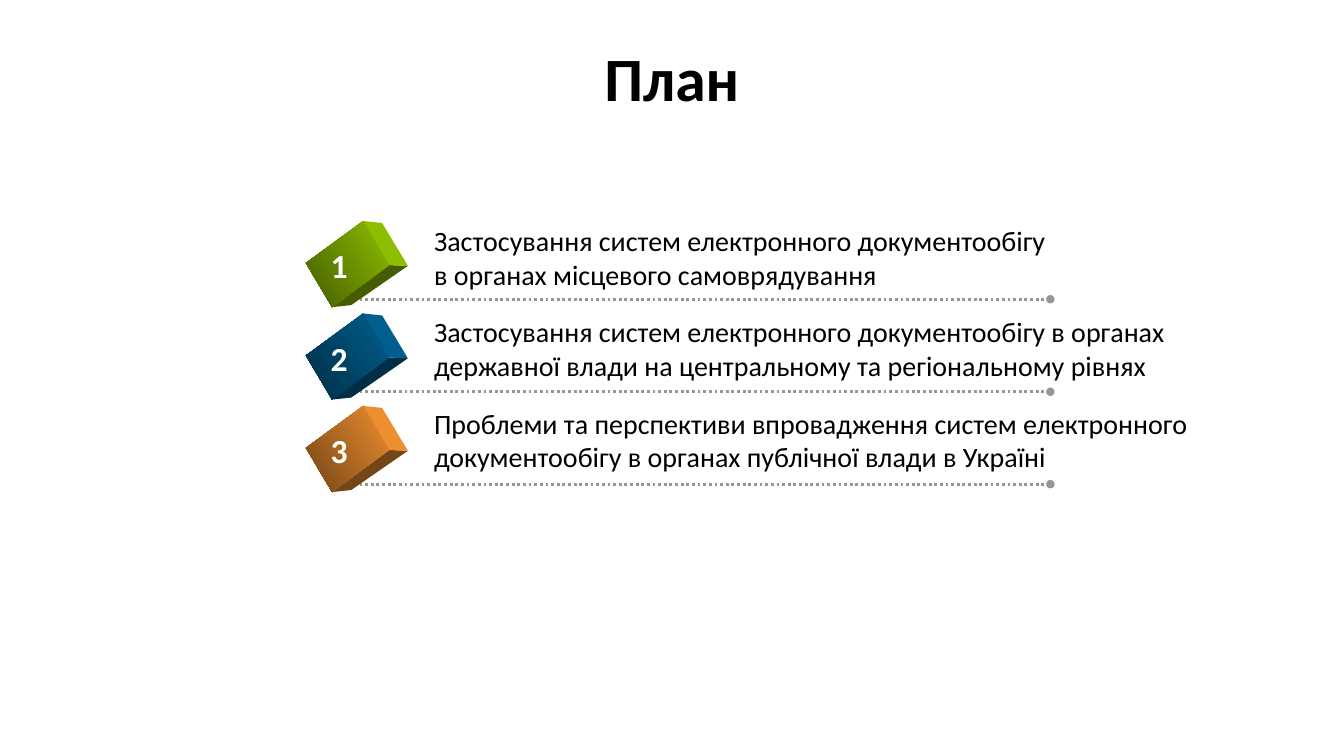
from lxml import etree
from pptx import Presentation
from pptx.dml.color import RGBColor
from pptx.enum.dml import MSO_LINE
from pptx.enum.shapes import MSO_CONNECTOR
from pptx.enum.text import MSO_ANCHOR, PP_ALIGN
from pptx.oxml.ns import qn
from pptx.util import Cm, Pt

STRAIGHT = MSO_CONNECTOR.STRAIGHT
DOTTED = MSO_LINE.ROUND_DOT
TOP, MIDDLE = MSO_ANCHOR.TOP, MSO_ANCHOR.MIDDLE
LEFT, CENTER = PP_ALIGN.LEFT, PP_ALIGN.CENTER

ROW_PITCH = 2.33
TEXT_PITCH = 2.3
FRONT = [(7.71, 6.63), (9.15, 5.57), (9.8, 6.68), (8.37, 7.74)]
SIDE = [(9.15, 5.57), (9.63, 5.62), (10.28, 6.7), (9.8, 6.68)]
BOTTOM = [(8.37, 7.74), (9.8, 6.68), (10.28, 6.7), (8.85, 7.69)]

TOPICS = [
    ("99CC00", 16.35, "Застосування систем електронного документообігу "
     "в органах місцевого самоврядування"),
    ("006699", 19.3, "Застосування систем електронного документообігу в органах "
     "державної влади на центральному та регіональному рівнях"),
    ("FF9933", 19.8, "Проблеми та перспективи впровадження систем електронного "
     "документообігу в органах публічної влади в Україні"),
]


def color(hex_code):
    return RGBColor.from_string(hex_code)


def shade(hex_code, factor):
    channels = (int(hex_code[i:i + 2], 16) for i in (0, 2, 4))
    return "".join(f"{round(channel * factor):02X}" for channel in channels)


class PlanSlide:
    font_name = "Calibri"
    ink = "000000"
    rule_color = "969696"

    def __init__(self, presentation):
        self.slide = presentation.slides.add_slide(presentation.slide_layouts[6])
        self.shapes = self.slide.shapes

    def text(self, left, top, width, height, words, size, hex_code=ink,
             bold=False, align=LEFT, anchor=TOP, spacing=1.0):
        box = self.shapes.add_textbox(Cm(left), Cm(top), Cm(width), Cm(height))
        frame = box.text_frame
        frame.word_wrap = True
        frame.vertical_anchor = anchor
        frame.text = words
        paragraph = frame.paragraphs[0]
        paragraph.alignment = align
        paragraph.line_spacing = spacing
        font = paragraph.runs[0].font
        font.name = self.font_name
        font.size = Pt(size)
        font.bold = bold
        font.color.rgb = color(hex_code)

    def rule(self, left, right, top):
        rule = self.shapes.add_connector(STRAIGHT, Cm(left), Cm(top), Cm(right), Cm(top))
        rule.line.color.rgb = color(self.rule_color)
        rule.line.width = Pt(2)
        rule.line.dash_style = DOTTED
        properties = rule._element.spPr
        etree.SubElement(properties.find(qn("a:ln")), qn("a:tailEnd"), type="oval")
        etree.SubElement(properties, qn("a:effectLst"))

    def face(self, corners, drop, light, dark=None):
        points = [(Cm(x), Cm(y + drop)) for x, y in corners]
        builder = self.shapes.build_freeform(*points[0], scale=1.0)
        builder.add_line_segments(points[1:], close=True)
        face = builder.convert_to_shape()
        face.shadow.inherit = False
        face.line.fill.background()
        if dark is None:
            face.fill.solid()
            face.fill.fore_color.rgb = color(light)
            return
        face.fill.gradient()
        face.fill.gradient_angle = 213
        for stop, hex_code, position in zip(face.fill.gradient_stops, (light, dark), (0, 1)):
            stop.color.rgb = color(hex_code)
            stop.position = position

    def block(self, drop, base):
        bright = shade(base, 0.93)
        self.face(BOTTOM, drop, shade(base, 0.45))
        self.face(SIDE, drop, bright)
        self.face(FRONT, drop, bright, shade(base, 0.45))

    def topic(self, index, base, width, words):
        drop = index * ROW_PITCH
        self.rule(8.92, 26.47, 7.54 + drop)
        self.block(drop, base)
        self.text(10.69, 5.51 + index * TEXT_PITCH, width, 1.96, words, 20)
        self.text(8.08, 6.05 + drop, 1.3, 1.27, str(index + 1), 24, "FFFFFF", bold=True)


def main():
    presentation = Presentation()
    presentation.slide_width = Cm(33.87)
    presentation.slide_height = Cm(19.05)
    plan = PlanSlide(presentation)
    plan.text(2.33, 1.01, 29.21, 2.1, "План", 44, bold=True,
              align=CENTER, anchor=MIDDLE, spacing=0.9)
    for index, (base, width, words) in enumerate(TOPICS):
        plan.topic(index, base, width, words)
    presentation.save("out.pptx")


if __name__ == "__main__":
    main()
